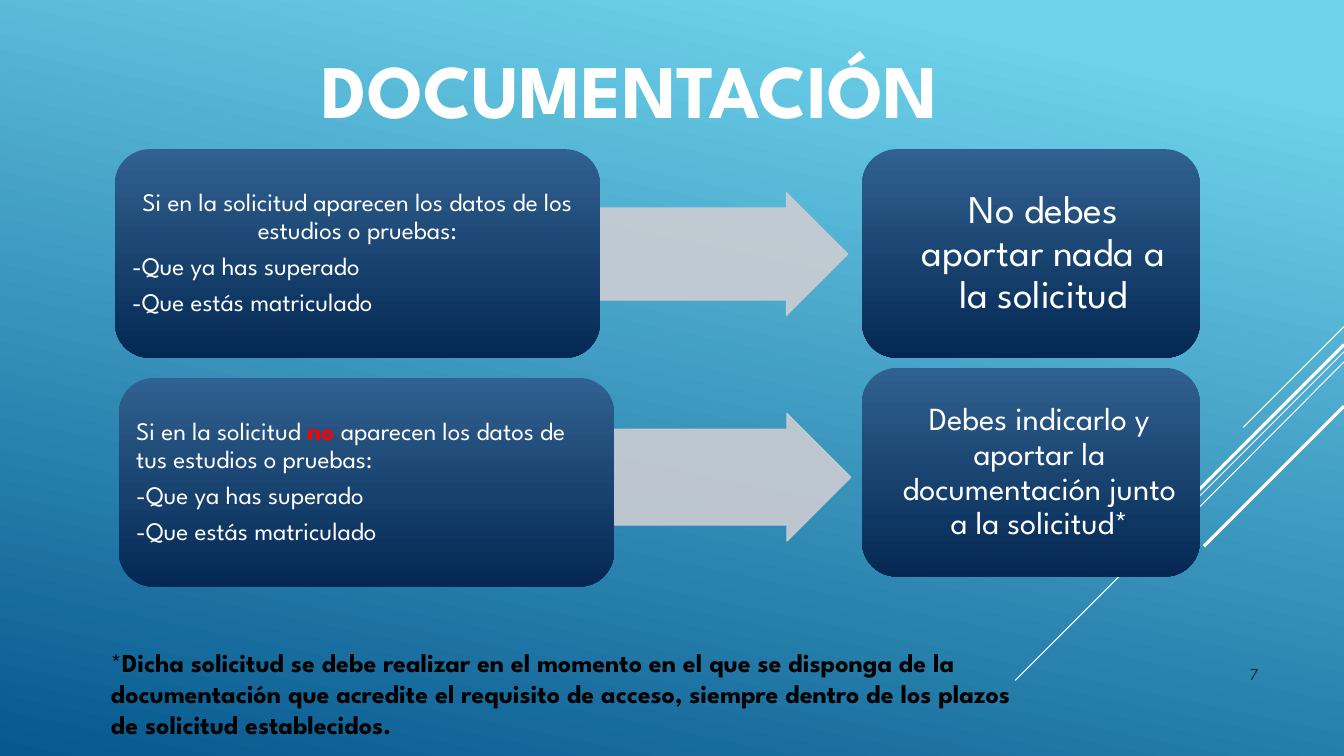
from lxml.etree import SubElement
from pptx import Presentation
from pptx.dml.color import RGBColor
from pptx.enum.shapes import MSO_CONNECTOR, MSO_SHAPE
from pptx.enum.text import MSO_ANCHOR, MSO_AUTO_SIZE, PP_ALIGN
from pptx.oxml.ns import qn
from pptx.util import Emu, Pt

PX = 9144  # 100 px to the inch
FONT = "League Spartan"
WHITE, BLACK, RED = "FFFFFF", "000000", "FF0000"
LEFT, CENTER, RIGHT = PP_ALIGN.LEFT, PP_ALIGN.CENTER, PP_ALIGN.RIGHT


def paint(target, *colors, angle=90, start=0):
    """Fill with one colour, or with a gradient turned clockwise by angle."""
    if len(colors) == 1:
        target.solid()
        target.fore_color.rgb = RGBColor.from_string(colors[0])
        return
    target.gradient()
    target.gradient_angle = 360 - angle
    for stop, color, position in zip(target.gradient_stops, colors, (start, 1)):
        stop.color.rgb = RGBColor.from_string(color)
        stop.position = position


def write(shape, paragraphs, size, anchor, margins, spacing=1.0, after=0):
    """Write (alignment, [(text, colour, bold), ...]) paragraphs into a shape."""
    frame = shape.text_frame
    frame.word_wrap = True
    frame.auto_size = MSO_AUTO_SIZE.NONE
    frame.vertical_anchor = anchor
    (frame.margin_left, frame.margin_top,
     frame.margin_right, frame.margin_bottom) = [Emu(m * PX) for m in margins]
    for index, (alignment, runs) in enumerate(paragraphs):
        paragraph = frame.add_paragraph() if index else frame.paragraphs[0]
        paragraph.alignment = alignment
        paragraph.line_spacing = spacing
        paragraph.space_before = Pt(0)
        paragraph.space_after = Pt(after)
        for text, color, bold in runs:
            run = paragraph.add_run()
            run.text = text
            run.font.name = FONT
            run.font.size = Pt(size)
            run.font.bold = bold
            paint(run.font.fill, color)


presentation = Presentation()
presentation.slide_width = Emu(1333 * PX)
presentation.slide_height = Emu(750 * PX)
slide = presentation.slides.add_slide(presentation.slide_layouts[1])
paint(slide.background.fill, "6ED2EB", "06588E", angle=102, start=0.1)

# Diagonal lines running off the right edge
diagonals = [
    (324, 1233, 424, 0.75),
    (349, 1007, 675, 0.75),
    (359, 1126, 567, 0.75),
    (342, 1142, 533, 2.25),
    (403, 1194, 542, 2.25),
]
for top, end_x, end_y, width in diagonals:
    line = slide.shapes.add_connector(
        MSO_CONNECTOR.STRAIGHT, *[Emu(n * PX) for n in (1333, top, end_x, end_y)])
    paint(line.line.fill, WHITE)
    line.line.width = Pt(width)
    SubElement(line._element.spPr, qn("a:effectLst"))

# Title, footnote and slide number
title, footnote = slide.placeholders
number = slide.shapes.add_textbox(0, 0, 0, 0)
for shape, place in [
    (title, (75, 26, 1100, 123)),
    (footnote, (100, 525, 934, 225)),
    (number, (1133, 610, 125, 73)),
]:
    shape.left, shape.top, shape.width, shape.height = [Emu(n * PX) for n in place]

write(title, [(CENTER, [("DOCUMENTACIÓN", WHITE, True)])],
      54, MSO_ANCHOR.MIDDLE, (10, 5, 10, 5))
write(footnote, [(LEFT, [
    ("*", BLACK, False),
    ("Dicha solicitud se debe realizar en el momento en el que se disponga de la "
     "documentación que acredite el requisito de acceso, siempre dentro de los "
     "plazos de solicitud establecidos.", BLACK, True),
])], 18.5, MSO_ANCHOR.BOTTOM, (10, 5, 10, 16))
properties = footnote.text_frame.paragraphs[0]._p.get_or_add_pPr()
properties.set("marL", "0")
properties.set("indent", "0")
SubElement(properties, qn("a:buNone"))
write(number, [(RIGHT, [("7", "0A304A", False)])],
      12, MSO_ANCHOR.BOTTOM, (10, 5, 10, 5))

# Arrows from each case to its outcome
for place in [(592, 191, 249, 122), (602, 410, 242, 127)]:
    arrow = slide.shapes.add_shape(
        MSO_SHAPE.RIGHT_ARROW, *[Emu(n * PX) for n in place])
    arrow.adjustments[0] = 0.75
    arrow.adjustments[1] = 0.5
    arrow.shadow.inherit = False
    arrow.line.width = Pt(0.75)
    for fill in (arrow.fill, arrow.line.fill):
        paint(fill, "CCCDD2")
    for color in arrow._element.spPr.iter(qn("a:srgbClr")):
        SubElement(color, qn("a:alpha"), val="90000")

# Cases on the left, outcomes on the right
conditions = [
    (LEFT, [("-Que ya has superado", WHITE, False)]),
    (LEFT, [("-Que estás matriculado", WHITE, False)]),
]
boxes = [
    ((114, 148, 481, 207), 18, (7, 4, 7, 4), [
        (CENTER, [("Si en la solicitud aparecen los datos de los estudios o pruebas:",
                   WHITE, False)]),
        *conditions]),
    ((118, 375, 491, 207), 18, (7, 4, 7, 4), [
        (LEFT, [("Si en la solicitud ", WHITE, False), ("no ", RED, True),
                ("aparecen los datos de tus estudios o pruebas:", WHITE, False)]),
        *conditions]),
    ((855, 148, 335, 207), 28, (37, 6, 12, 6), [
        (CENTER, [("No debes aportar nada a la solicitud", WHITE, False)])]),
    ((855, 365, 335, 207), 23, (27, 5, 10, 5), [
        (CENTER, [("Debes indicarlo y aportar la documentación junto a la solicitud*",
                   WHITE, False)])]),
]
for place, size, margins, paragraphs in boxes:
    box = slide.shapes.add_shape(
        MSO_SHAPE.ROUNDED_RECTANGLE, *[Emu(n * PX) for n in place])
    box.shadow.inherit = False
    box.line.fill.background()
    paint(box.fill, "316190", "042853")
    write(box, paragraphs, size, MSO_ANCHOR.MIDDLE, margins,
          spacing=0.9, after=size * 0.35)

presentation.save("out.pptx")
